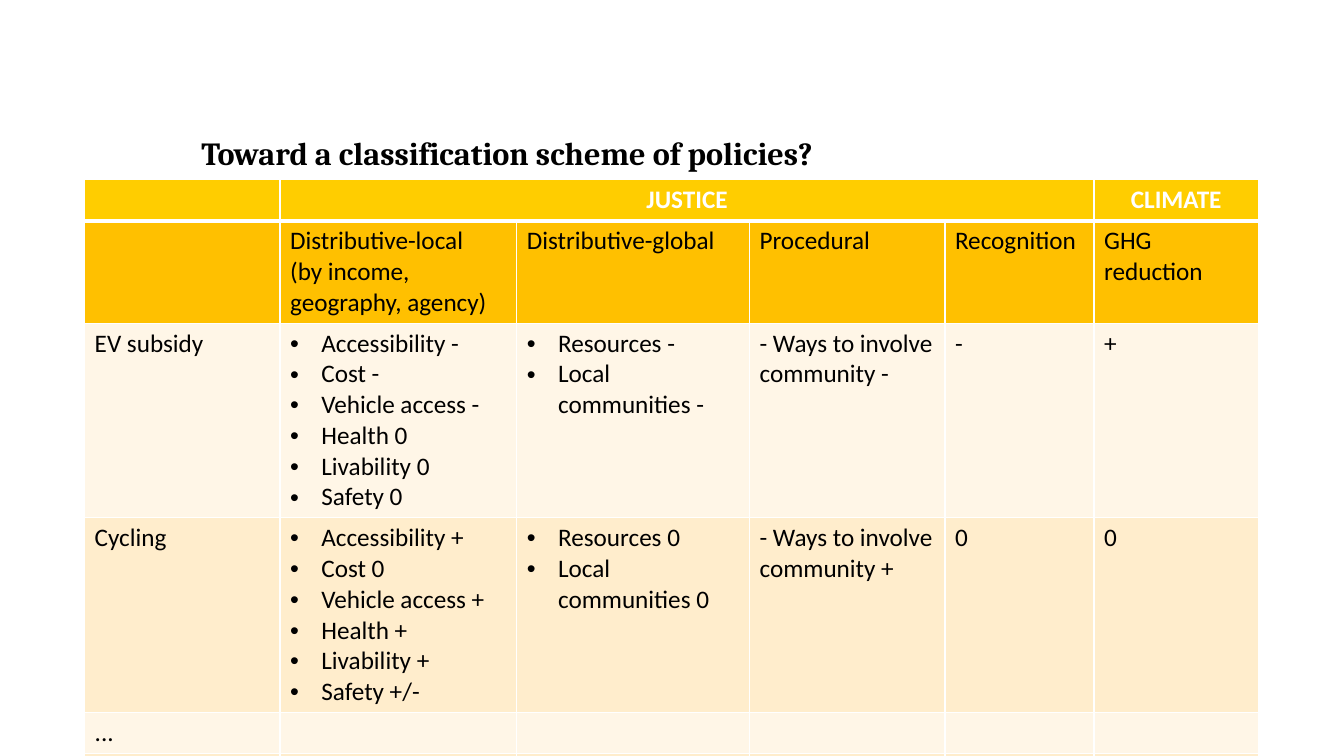
import dataclasses
import pptx
import pptx.util
import pptx.dml.color
import pptx.enum.text
import pptx.oxml
import pptx.oxml.ns

Inches = pptx.util.Inches
Pt = pptx.util.Pt
ALIGN = pptx.enum.text.PP_ALIGN


@dataclasses.dataclass(frozen=True)
class Theme:
    ink: str = "000000"
    white: str = "FFFFFF"
    head: str = "FFCD00"
    sub: str = "FFC000"
    bands: tuple = ("FFF6E7", "FFEDCC")
    serif: str = "Cambria"
    sans: str = "Calibri"
    title: int = 23
    body: int = 18
    thin: int = 1
    thick: int = 3
    indent: float = 0.31


def color(code):
    return pptx.dml.color.RGBColor.from_string(code)


class Deck:
    def __init__(self, theme, width, height):
        self.theme = theme
        self.file = pptx.Presentation()
        self.file.slide_width = Inches(width)
        self.file.slide_height = Inches(height)
        self.slide = None

    def page(self):
        self.slide = self.file.slides.add_slide(self.file.slide_layouts[5])

    def style(self, para, name, size, code, bold):
        for run in para.runs:
            run.font.name = name
            run.font.size = Pt(size)
            run.font.color.rgb = color(code)
            run.font.bold = bold

    def title(self, text, box):
        shape = self.slide.shapes.title
        shape.left, shape.top, shape.width, shape.height = map(Inches, box)
        frame = shape.text_frame
        frame.text = text
        frame.word_wrap = True
        frame.auto_size = pptx.enum.text.MSO_AUTO_SIZE.NONE
        frame.vertical_anchor = pptx.enum.text.MSO_ANCHOR.TOP
        para = frame.paragraphs[0]
        para.alignment = ALIGN.LEFT
        self.style(para, self.theme.serif, self.theme.title, self.theme.ink, True)

    def border(self, cell, base):
        props = cell._tc.get_or_add_tcPr()
        for side in ("L", "R", "T", "B"):
            width = Pt(base if side == "B" else self.theme.thin)
            props.append(pptx.oxml.parse_xml(
                f'<a:ln{side} {pptx.oxml.ns.nsdecls("a")} w="{width}"><a:solidFill>'
                f'<a:srgbClr val="{self.theme.white}"/></a:solidFill></a:ln{side}>'))

    def bullet(self, para):
        props = para._p.get_or_add_pPr()
        props.set("marL", str(Inches(self.theme.indent)))
        props.set("indent", str(-Inches(self.theme.indent)))
        ns = pptx.oxml.ns.nsdecls("a")
        props.append(pptx.oxml.parse_xml(f'<a:buFont {ns} typeface="Arial"/>'))
        props.append(pptx.oxml.parse_xml(f'<a:buChar {ns} char="•"/>'))

    def cell(self, cell, text, row, listed):
        theme = self.theme
        top = row == 0
        fill = (theme.head, theme.sub)[row] if row < 2 else theme.bands[row % 2]
        self.border(cell, theme.thick if top else theme.thin)
        cell.fill.solid()
        cell.fill.fore_color.rgb = color(fill)
        if not text:
            return
        cell.text_frame.text = text
        for para in cell.text_frame.paragraphs:
            if listed:
                self.bullet(para)
            para.alignment = ALIGN.CENTER if top else ALIGN.LEFT
            self.style(para, theme.sans, theme.body, theme.white if top else theme.ink, top)

    def table(self, rows, place, widths, height, lists):
        left, top = place
        frame = self.slide.shapes.add_table(
            len(rows), len(widths), Inches(left), Inches(top),
            Inches(sum(widths)), Inches(height * len(rows)))
        grid = frame.table
        for col, width in zip(grid.columns, widths):
            col.width = Inches(width)
        for r, row in enumerate(rows):
            grid.rows[r].height = Inches(height)
            for c, text in enumerate(row):
                self.cell(grid.cell(r, c), text, r, r > 1 and c in lists)
        return grid


def local(*marks):
    names = ("Accessibility", "Cost", "Vehicle access", "Health", "Livability", "Safety")
    return "\n".join(f"{name} {mark}" for name, mark in zip(names, marks))


def world(mark):
    return f"Resources {mark}\nLocal communities {mark}"


def main():
    deck = Deck(Theme(), 13.34, 7.5)
    deck.page()
    deck.title("Toward a classification scheme of policies?", (1.9, 1.27, 8.27, 1.37))
    rows = [
        ["", "JUSTICE", "", "", "", "CLIMATE"],
        ["", "Distributive-local\n(by income, geography, agency)", "Distributive-global",
         "Procedural", "Recognition", "GHG reduction"],
        ["EV subsidy", local("-", "-", "-", "0", "0", "0"), world("-"),
         "- Ways to involve community -", "-", "+"],
        ["Cycling", local("+", "0", "+", "+", "+", "+/-"), world("0"),
         "- Ways to involve community +", "0", "0"],
        ["...", "", "", "", "", ""],
        [""] * 6,
    ]
    grid = deck.table(rows, (0.84, 1.78), (1.94, 2.35, 2.31, 1.94, 1.48, 1.63), 0.41, (1, 2))
    grid.cell(0, 1).merge(grid.cell(0, 4))
    deck.file.save("out.pptx")


if __name__ == "__main__":
    main()
